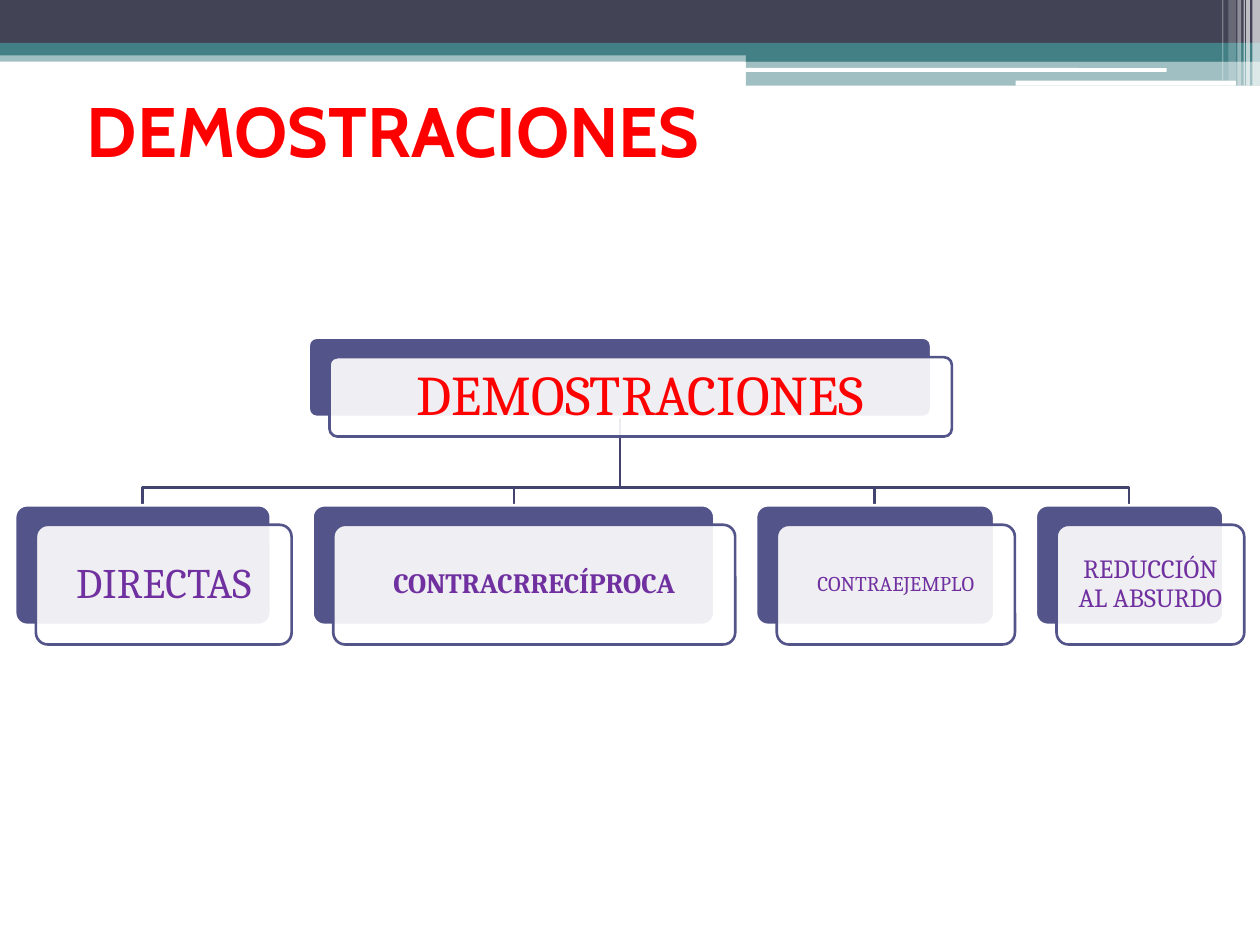
from lxml import etree
from pptx import Presentation
from pptx import util as u
from pptx.dml.color import RGBColor
from pptx.enum import shapes, text
from pptx.oxml.ns import qn

COLORS = {"dark": "424456", "teal": "438086", "white": "FFFFFF", "indigo": "53548A",
          "line": "42436F", "red": "FF0000", "purple": "7030A0"}
RECT, ROUND = shapes.MSO_SHAPE.RECTANGLE, shapes.MSO_SHAPE.ROUNDED_RECTANGLE

prs = Presentation()
prs.slide_width, prs.slide_height = u.Inches(10), u.Inches(7.5)
COL, ROW = prs.slide_width / 10, prs.slide_height / 7.5  # grid of 10 columns by 7.5 rows
s = prs.slides.add_slide(prs.slide_layouts[5])


def rgb(name):
    return RGBColor.from_string(COLORS[name])


def add_box(kind, x, y, w, h, fill, alpha=100, line=None, adj=0.1):
    sp = s.shapes.add_shape(kind, round(x * COL), round(y * ROW), round(w * COL), round(h * ROW))
    sp.shadow.inherit = False
    sp.fill.solid()
    sp.fill.fore_color.rgb = rgb(fill)
    if alpha < 100:
        clr = sp.fill._xPr.find(qn("a:solidFill"))[0]
        etree.SubElement(clr, qn("a:alpha"), val=str(alpha * 1000))
    if line:
        sp.line.color.rgb, sp.line.width = rgb(line), u.Pt(1.5)
    else:
        sp.line.fill.background()
    if kind == ROUND:
        sp.adjustments[0] = adj
    return sp


# Header bands: x, y, width, height, colour, opacity
for x, y, w, h, fill, alpha in [
    (0, 0.4, 10, 0.09, "teal", 50),
    (0, 0, 10, 0.34, "dark", 100),
    (0, 0.34, 10, 0.1, "teal", 100),
    (5.92, 0.39, 4.08, 0.1, "teal", 100),
    (5.92, 0.48, 4.08, 0.2, "teal", 50),
]:
    add_box(RECT, x, y, w, h, fill, alpha)

# White slits in the header
for x, y, w, h in [(5.91, 0.54, 3.35, 0.03), (8.06, 0.64, 1.75, 0.04)]:
    add_box(ROUND, x, y, w, h, "white", adj=0.167)

# Vertical stripes at the right edge: x, width, height, opacity
for x, w, h, alpha in [(9.94, 0.06, 0.68, 65), (9.89, 0.03, 0.68, 65), (9.87, 0.01, 0.68, 60),
                       (9.82, 0.03, 0.68, 40), (9.75, 0.06, 0.64, 20), (9.7, 0.01, 0.64, 30)]:
    add_box(RECT, x, 0, w, h, "white", alpha)

# Title
title = s.shapes.title
title.left, title.top = round(0.59 * COL), round(0.44 * ROW)
title.width, title.height = round(9 * COL), round(1.17 * ROW)
tf = title.text_frame
tf.text = "DEMOSTRACIONES"
tf.vertical_anchor = text.MSO_ANCHOR.MIDDLE
p = tf.paragraphs[0]
p.alignment = text.PP_ALIGN.LEFT
p.font.name, p.font.size, p.font.bold = "Cabin", u.Pt(40), True
p.font.color.rgb = rgb("red")

# Tree nodes: x, y, width, height, label, size, colour, bold, inset
ROOT_X, ROOT_Y, ROOT_W, ROOT_H = 2.45, 2.68, 4.94, 0.63
CHILD_Y, CHILD_H, GAP = 4.01, 0.95, 0.33
nodes = [(ROOT_X, ROOT_Y, ROOT_W, ROOT_H, "DEMOSTRACIONES", 32, "red", False, 0.13)]
x = 0.12
for w, label, size, bold, inset in [
    (2.03, "DIRECTAS", 24, False, 0.1),
    (3.19, "CONTRACRRECÍPROCA", 16, True, 0.07),
    (1.89, "CONTRAEJEMPLO", 12, False, 0.05),
    (1.49, "REDUCCIÓN AL ABSURDO", 15, False, 0.06),
]:
    nodes.append((x, CHILD_Y, w, CHILD_H, label, size, "purple", bold, inset))
    x += w + GAP

# Branches from the root to each child
root_mid, bend_y = ROOT_X + ROOT_W / 2, 3.87
for x, y, w, *_ in nodes[1:]:
    mid = x + w / 2
    fb = s.shapes.build_freeform(root_mid * 100, (ROOT_Y + ROOT_H) * 100, scale=COL / 100)
    fb.add_line_segments([(px * 100, py * 100) for px, py in
                          [(root_mid, bend_y), (mid, bend_y), (mid, y)]], close=False)
    branch = fb.convert_to_shape()
    branch.shadow.inherit = False
    branch.fill.background()
    branch.line.color.rgb, branch.line.width = rgb("line"), u.Pt(1.5)

# Each node is a solid plate with a translucent card shifted over it
for x, y, w, h, label, size, color, bold, inset in nodes:
    add_box(ROUND, x, y, w, h, "indigo", line="white")
    card = add_box(ROUND, x + 0.165, y + 0.155, w, h, "white", 90, "indigo")
    tf = card.text_frame
    tf.word_wrap = True
    tf.vertical_anchor = text.MSO_ANCHOR.MIDDLE
    tf.margin_left = tf.margin_right = tf.margin_top = tf.margin_bottom = u.Inches(inset)
    tf.text = label
    p = tf.paragraphs[0]
    p.alignment, p.line_spacing = text.PP_ALIGN.CENTER, 0.9
    p.font.name, p.font.size, p.font.bold = "Cambria", u.Pt(size), bold
    p.font.color.rgb = rgb(color)

prs.save("out.pptx")
